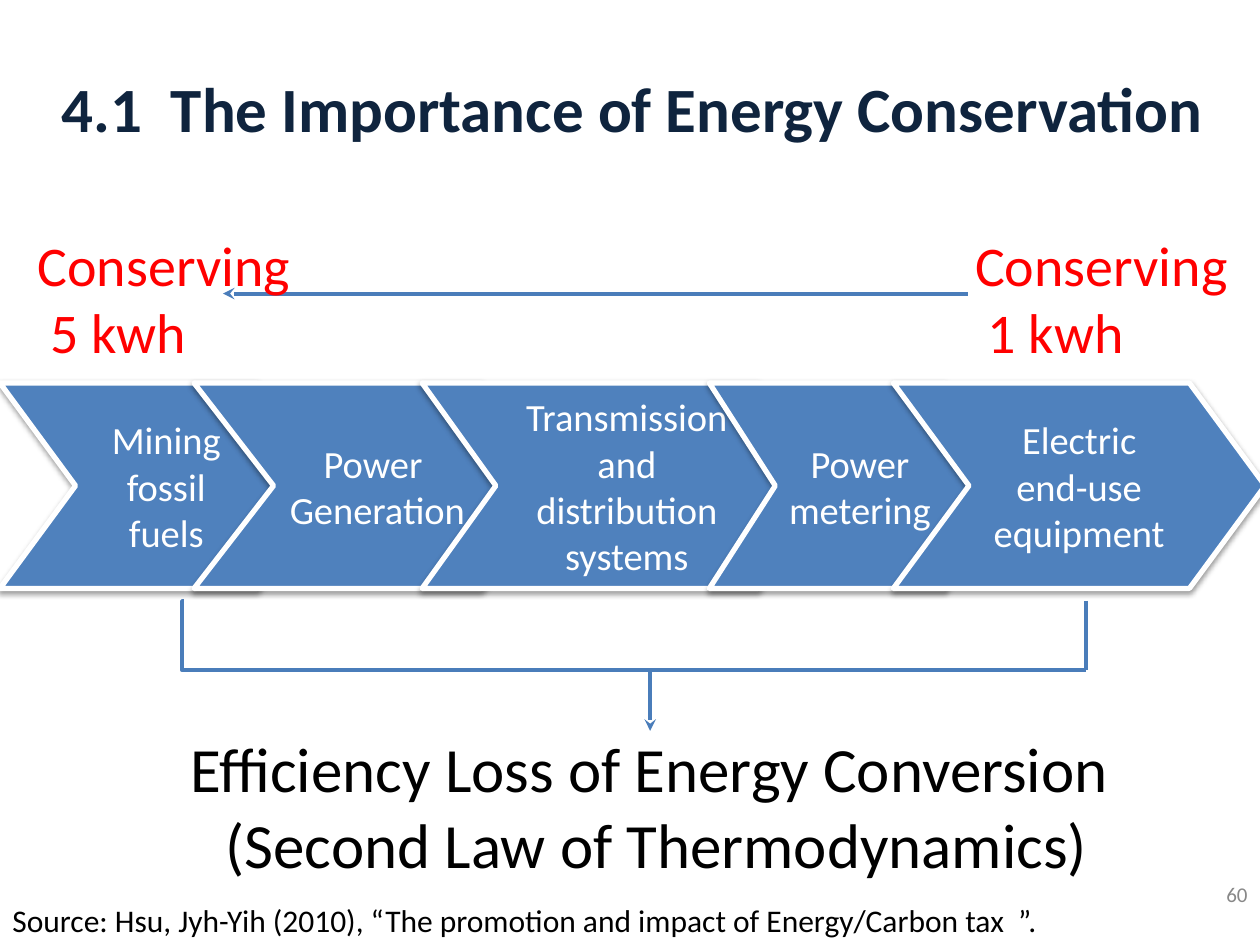
from lxml.etree import SubElement
from pptx import Presentation
from pptx.dml.color import RGBColor
from pptx.enum.shapes import MSO_CONNECTOR, MSO_SHAPE
from pptx.enum.text import MSO_ANCHOR, PP_ALIGN
from pptx.oxml.ns import qn
from pptx.util import Inches, Pt

FONT = "Calibri"
COLORS = {
    "title": "0F243E",
    "highlight": "FF0000",
    "text": "000000",
    "page": "888888",
    "chevron": "4F81BD",
    "line": "4A7DBA",
    "white": "FFFFFF",
}
CHEVRON_TOP, CHEVRON_HEIGHT = 3.04, 1.63
# left, width, point depth, paragraphs
STAGES = [
    (0, 2.64, 0.368, ["Mining fossil fuels"]),
    (1.54, 2.91, 0.387, ["Power ", "Generation"]),
    (3.35, 3.25, 0.359, ["Transmission", "and distribution systems"]),
    (5.63, 2.39, 0.321, ["Power", "metering"]),
    (7.09, 2.95, 0.368, ["Electric", "end-use", "equipment"]),
]
BRACKET_LEFT, BRACKET_RIGHT = 1.46, 8.62
BRACKET_TOP, BRACKET_BOTTOM = 4.77, 5.32


def color(name):
    return RGBColor.from_string(COLORS[name])


def write_paragraphs(text_frame, paragraphs, size, color_name, align, bold=False):
    text_frame.word_wrap = True
    for index, text in enumerate(paragraphs):
        paragraph = text_frame.add_paragraph() if index else text_frame.paragraphs[0]
        paragraph.text = text
        paragraph.alignment = align
        paragraph.font.name = FONT
        paragraph.font.size = Pt(size)
        paragraph.font.bold = bold
        paragraph.font.color.rgb = color(color_name)


def add_text(slide, box, paragraphs, size, color_name, align=PP_ALIGN.LEFT,
             anchor=MSO_ANCHOR.TOP, bold=False):
    shape = slide.shapes.add_textbox(*map(Inches, box))
    shape.text_frame.vertical_anchor = anchor
    write_paragraphs(shape.text_frame, paragraphs, size, color_name, align, bold)


def add_soft_shadow(shape):
    effects = shape._element.spPr.find(qn("a:effectLst"))
    shadow = SubElement(effects, qn("a:outerShdw"), blurRad="40000", dist="20000",
                        dir="5400000", rotWithShape="0")
    shade = SubElement(shadow, qn("a:srgbClr"), val="000000")
    SubElement(shade, qn("a:alpha"), val="38000")


def add_chevron(slide, left, width, depth, paragraphs):
    shape = slide.shapes.add_shape(
        MSO_SHAPE.CHEVRON, Inches(left), Inches(CHEVRON_TOP),
        Inches(width), Inches(CHEVRON_HEIGHT))
    shape.adjustments[0] = depth
    shape.fill.solid()
    shape.fill.fore_color.rgb = color("chevron")
    shape.line.color.rgb = color("white")
    shape.line.width = Pt(3)
    shape.shadow.inherit = False
    add_soft_shadow(shape)
    write_paragraphs(shape.text_frame, paragraphs, 22, "white", PP_ALIGN.CENTER)


def add_line(slide, start, end, kind=MSO_CONNECTOR.STRAIGHT, arrow=False):
    connector = slide.shapes.add_connector(kind, *map(Inches, start + end))
    connector.line.color.rgb = color("line")
    connector.line.width = Pt(2.25)
    if arrow:
        SubElement(connector.line._get_or_add_ln(), qn("a:tailEnd"), type="stealth")
    SubElement(connector._element.spPr, qn("a:effectLst"))
    return connector


def add_bracket(slide):
    """Join the first and last stages from below and point to the conclusion."""
    elbow = add_line(slide, (BRACKET_LEFT, BRACKET_TOP),
                     (BRACKET_RIGHT, BRACKET_BOTTOM), MSO_CONNECTOR.ELBOW)
    geometry = elbow._element.spPr.find(qn("a:prstGeom"))
    guides = geometry.find(qn("a:avLst"))
    if guides is None:
        guides = SubElement(geometry, qn("a:avLst"))
    SubElement(guides, qn("a:gd"), name="adj1", fmla="val -200")
    add_line(slide, (BRACKET_RIGHT, BRACKET_TOP), (BRACKET_RIGHT, BRACKET_BOTTOM))
    add_line(slide, (5.16, BRACKET_BOTTOM), (5.16, 5.8), arrow=True)


def main():
    presentation = Presentation()
    presentation.slide_width = Inches(10)
    presentation.slide_height = Inches(7.5)
    slide = presentation.slides.add_slide(presentation.slide_layouts[6])

    add_text(slide, (-0.08, 0.39, 10.2, 0.92),
             ["4.1  The Importance of Energy Conservation"], 36, "title",
             PP_ALIGN.CENTER, MSO_ANCHOR.MIDDLE, bold=True)
    add_line(slide, (7.68, 2.33), (1.77, 2.33), arrow=True)
    add_text(slide, (1.14, 5.74, 8.03, 1.31),
             ["Efficiency Loss of\u00a0Energy Conversion\v (Second Law of Thermodynamics)"],
             36, "text", PP_ALIGN.CENTER)
    add_bracket(slide)
    for stage in STAGES:
        add_chevron(slide, *stage)
    for left, width, amount in [(0.2, 2.91, " 5 kwh"), (7.64, 2.24, " 1 kwh")]:
        add_text(slide, (left, 1.78, width, 1.18), ["Conserving", amount],
                 32, "highlight")
    add_text(slide, (9.49, 6.9, 0.51, 0.4), ["60"], 12, "page",
             PP_ALIGN.RIGHT, MSO_ANCHOR.MIDDLE)
    add_text(slide, (0, 7.1, 8.78, 0.4),
             ["Source: Hsu, Jyh-Yih (2010), “The promotion and impact of "
              "Energy/Carbon tax  ”."], 18, "text")
    presentation.save("out.pptx")


if __name__ == "__main__":
    main()
